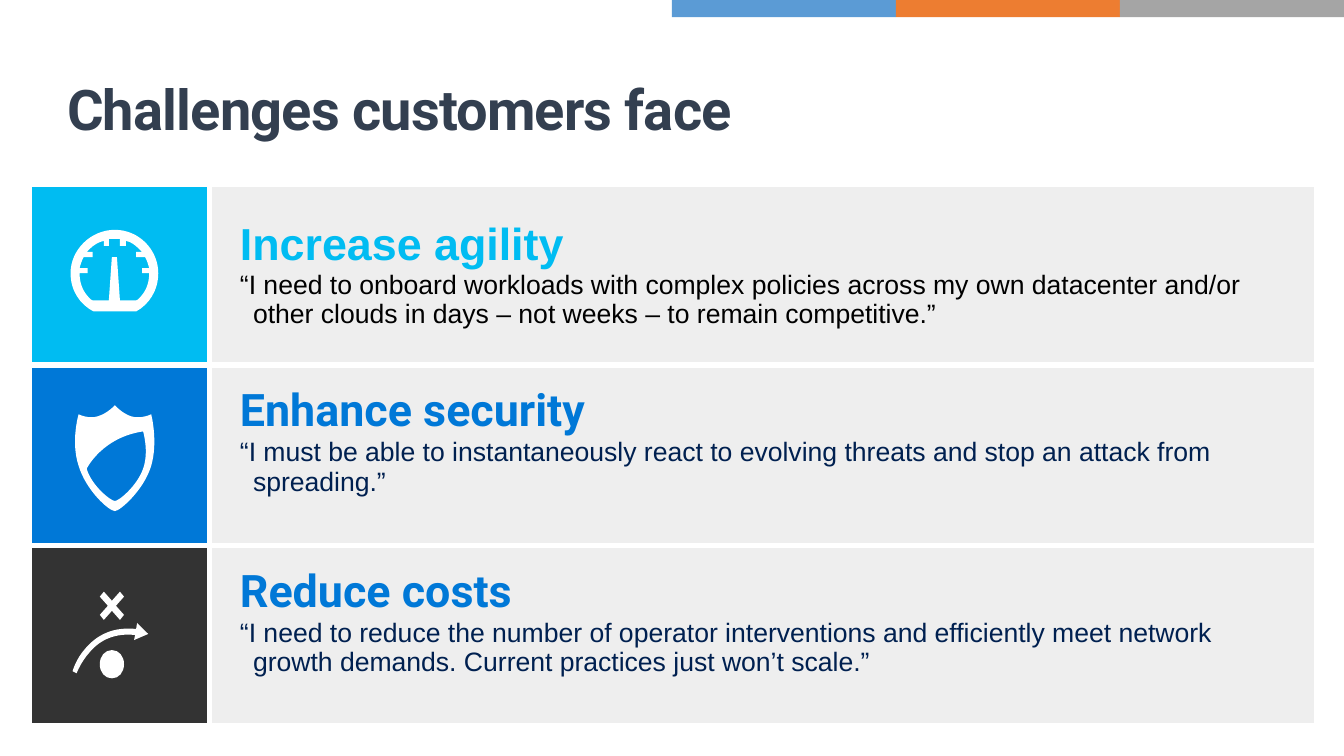
from pptx import Presentation
from pptx import util as u
from pptx.dml.color import RGBColor
from pptx.enum import shapes, text
from pptx.oxml import parse_xml
from pptx.oxml.ns import nsdecls, qn

WIDE, HIGH = 13.33, 7.5
LEFT, TOP, ROW = 0.29, 1.83, 1.79
COLS = (ROW, 10.98)
HANG = 0.13
HUES = {
    "sky": "00BCF2", "blue": "0078D7", "coal": "333333", "pale": "EEEEEE",
    "navy": "002050", "black": "000000", "white": "FFFFFF", "slate": "333F50",
    "azure": "5B9BD5", "orange": "ED7D31", "grey": "A5A5A5",
}
BARS = ("azure", "orange", "grey")

# icon hue, heading, heading font, heading hue, quote, quote hue, bottom margin
ROWS = (
    ("sky", "Increase agility", "Arial", "sky",
     "“I need to onboard workloads with complex policies across my own datacenter "
     "and/or other clouds in days – not weeks – to remain competitive.”",
     "black", 0.05),
    ("blue", "Enhance security", "Roboto", "blue",
     "“I must be able to instantaneously react to evolving threats and stop an "
     "attack from spreading.”", "navy", 0.33),
    ("coal", "Reduce costs", "Roboto", "blue",
     "“I need to reduce the number of operator interventions and efficiently meet "
     "network growth demands. Current practices just won’t scale.”",
     "navy", 0.33),
)

# Outlines in hundredths of an inch: a pair is a corner, six numbers a curve.
GAUGE = (
    ((114, 228), (138, 228, 157, 248, 157, 271), (157, 288, 148, 302, 135, 309),
     (93, 309), (79, 302, 70, 288, 70, 271), (70, 248, 90, 228, 114, 228)),
    ((138, 296), (145, 289, 148, 281, 148, 271), (141, 271), (141, 266), (148, 266),
     (147, 262, 146, 259, 144, 255), (135, 255), (135, 250), (141, 250),
     (140, 249, 139, 248, 138, 247), (134, 243, 130, 240, 125, 239),
     (125, 244), (119, 244), (119, 237), (117, 237, 115, 237, 114, 237),
     (112, 237, 110, 237, 108, 237), (108, 244), (103, 244), (103, 239),
     (98, 240, 93, 243, 89, 247), (88, 248, 87, 249, 86, 250),
     (92, 250), (92, 255), (83, 255),
     (81, 259, 80, 262, 79, 266), (87, 266), (87, 271), (79, 271),
     (79, 281, 82, 289, 89, 296), (90, 297, 91, 298, 92, 298),
     (108, 298), (111, 255), (116, 255), (119, 298), (135, 298),
     (136, 298, 137, 297, 138, 296)),
)
SHIELD = (
    ((150, 411), (150, 411, 140, 416, 130, 413), (121, 410, 114, 402, 114, 402),
     (114, 402, 107, 410, 97, 413), (88, 416, 78, 411, 78, 411),
     (78, 411, 70, 438, 78, 462), (85, 486, 108, 507, 114, 507),
     (119, 507, 143, 486, 150, 462), (157, 438, 150, 411, 150, 411)),
    ((142, 465), (136, 482, 118, 497, 114, 497), (110, 497, 91, 482, 86, 465),
     (86, 465, 101, 434, 142, 428), (142, 428, 148, 448, 142, 465)),
)
PLAY = (
    ((123, 659), (123, 667, 118, 673, 111, 673), (104, 673, 99, 667, 99, 659),
     (99, 651, 104, 645, 111, 645), (118, 645, 123, 651, 123, 659)),
    ((123, 610), (115, 601), (123, 592), (119, 587), (111, 596), (103, 587),
     (99, 592), (107, 601), (99, 610), (103, 615), (111, 606), (119, 615)),
    ((147, 629), (136, 618), (135, 624), (124, 623, 114, 624, 105, 628),
     (98, 631, 91, 636, 85, 643), (75, 654, 72, 666, 72, 666), (76, 668),
     (76, 668, 80, 657, 89, 647), (100, 634, 115, 628, 134, 630), (133, 635)),
)


def tint(name):
    return RGBColor.from_string(HUES[name])


def paint(shape, hue):
    shape.shadow.inherit = False
    shape.fill.solid()
    shape.fill.fore_color.rgb = tint(hue)
    shape.line.fill.background()


def apply(thing, **form):
    for key, value in form.items():
        setattr(thing, key, value)


def write(para, words, face, size, hue, bold):
    run = para.add_run()
    run.text = words
    apply(run.font, name=face, size=u.Pt(size), bold=bold)
    run.font.color.rgb = tint(hue)
    return run


def bend(shape, rings):
    """Join the three segments of each curve into one cubic."""
    lines = iter(list(shape._element.iter(qn("a:lnTo"))))
    for ring in rings:
        for part in ring[1:]:
            first = next(lines)
            if len(part) == 6:
                first.tag = qn("a:cubicBezTo")
                for spare in (next(lines), next(lines)):
                    first.append(spare[0])
                    spare.getparent().remove(spare)


def add_icon(slide, rings):
    pen = slide.shapes.build_freeform(*rings[0][0], scale=u.Inches(0.01))
    for i, ring in enumerate(rings):
        if i:
            pen.move_to(*ring[0])
        points = [part[k:k + 2] for part in ring[1:] for k in range(0, len(part), 2)]
        pen.add_line_segments(points, close=True)
    icon = pen.convert_to_shape()
    bend(icon, rings)
    paint(icon, "white")


def add_bars(slide):
    wide = WIDE / 6
    for i, hue in enumerate(BARS):
        bar = slide.shapes.add_shape(
            shapes.MSO_SHAPE.RECTANGLE, u.Inches(WIDE / 2 + i * wide), 0,
            u.Inches(wide), u.Inches(0.17))
        paint(bar, hue)


def add_title(slide, words):
    title = slide.shapes.title
    apply(title, left=u.Inches(WIDE * 0.05), top=u.Inches(HIGH * 0.06),
          width=u.Inches(WIDE * 0.9), height=u.Inches(HIGH / 6))
    frame = title.text_frame
    apply(frame, margin_left=0, margin_right=0, margin_top=0, margin_bottom=0,
          word_wrap=True, auto_size=text.MSO_AUTO_SIZE.NONE,
          vertical_anchor=text.MSO_ANCHOR.MIDDLE)
    para = frame.paragraphs[0]
    para.alignment = text.PP_ALIGN.LEFT
    run = write(para, words, "Roboto", 40, "slate", True)
    run._r.get_or_add_rPr().set("spc", "-60")


def style_cell(cell, hue):
    props = cell._tc.get_or_add_tcPr()
    for side in "LRTB":
        props.append(parse_xml(
            f'<a:ln{side} {nsdecls("a")} w="{u.Pt(4.5)}"><a:solidFill>'
            f'<a:srgbClr val="{HUES["white"]}"/></a:solidFill></a:ln{side}>'))
    cell.fill.solid()
    cell.fill.fore_color.rgb = tint(hue)


def add_grid(slide):
    grid = slide.shapes.add_table(
        len(ROWS), len(COLS), u.Inches(LEFT), u.Inches(TOP),
        u.Inches(sum(COLS)), u.Inches(ROW * len(ROWS))).table
    apply(grid, first_row=False, horz_banding=False)
    for col, wide in zip(grid.columns, COLS):
        col.width = u.Inches(wide)
    for row, (back, head, face, hue, quote, ink, foot) in zip(grid.rows, ROWS):
        row.height = u.Inches(ROW)
        icon, cell = row.cells
        style_cell(icon, back)
        style_cell(cell, "pale")
        apply(cell, margin_left=u.Inches(0.3), margin_right=u.Inches(0.4),
              margin_top=u.Inches(0.05), margin_bottom=u.Inches(foot),
              vertical_anchor=text.MSO_ANCHOR.MIDDLE)
        frame = cell.text_frame
        write(frame.paragraphs[0], head, face, 32, hue, True)
        para = frame.add_paragraph()
        props = para._p.get_or_add_pPr()
        props.set("marL", str(u.Inches(HANG)))
        props.set("indent", str(-u.Inches(HANG)))
        write(para, quote, "Arial", 19, ink, False)


def main():
    deck = Presentation()
    apply(deck, slide_width=u.Inches(WIDE), slide_height=u.Inches(HIGH))
    slide = deck.slides.add_slide(deck.slide_layouts[5])
    add_bars(slide)
    add_title(slide, "Challenges customers face")
    add_grid(slide)
    for rings in (GAUGE, SHIELD, PLAY):
        add_icon(slide, rings)
    deck.save("out.pptx")


if __name__ == "__main__":
    main()
